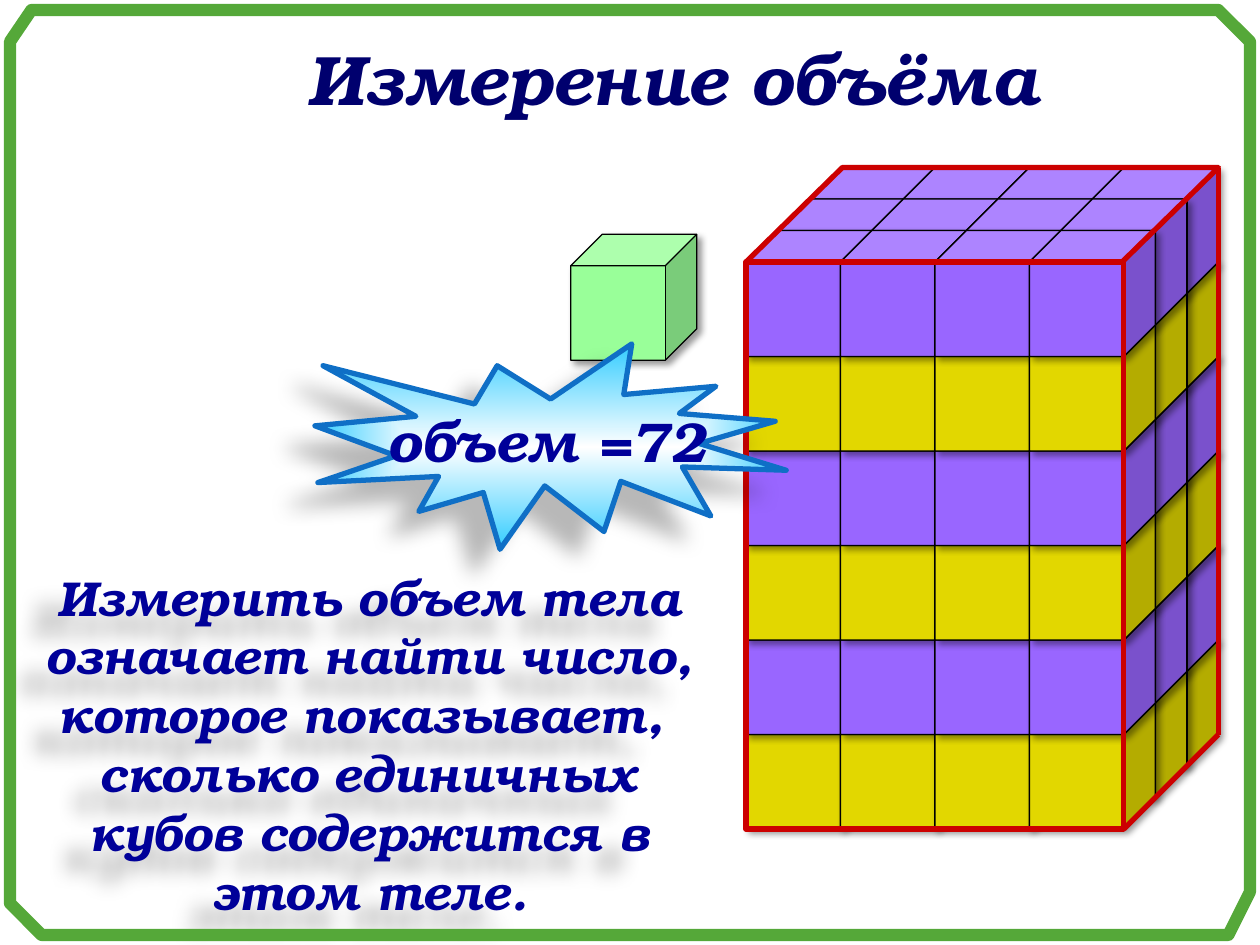
from dataclasses import dataclass
from itertools import product

from lxml.etree import SubElement
from pptx import Presentation
from pptx.dml.color import RGBColor
from pptx.enum.shapes import MSO_CONNECTOR, MSO_SHAPE
from pptx.enum.text import MSO_ANCHOR, MSO_AUTO_SIZE, PP_ALIGN
from pptx.oxml.ns import qn
from pptx.util import Inches, Pt


@dataclass(frozen=True)
class Theme:
    font: str = "TeX Gyre Bonum"
    title_size: int = 40
    seal_size: int = 32
    body_size: int = 28
    title: str = "00006E"
    text: str = "000099"
    purple: str = "9966FF"
    yellow: str = "E2D700"
    unit: str = "99FF99"
    edge: str = "000000"
    outline: str = "CC0000"
    frame: str = "55A839"
    seal_line: str = "0F6FC6"
    seal_center: str = "FFFFFF"
    seal_rim: str = "33CCFF"


THEME = Theme()
COLUMNS, ROWS, LAYERS = 4, 6, 3
CUBE_SIDE, CUBE_DEPTH = 0.75, 0.25
BLOCK_LEFT, BLOCK_TOP = 5.92, 2.08  # top left corner of the front face
CUBE_SHADOW = dict(opacity=40, blur=4, distance=3, angle=45)
LONG_SHADOW = dict(opacity=28, blur=11.8, distance=19.7, angle=141)


def set_line(shape, color, width):
    shape.line.color.rgb = RGBColor.from_string(color)
    shape.line.width = Pt(width)


def set_shadow(shape, opacity, blur, distance, angle):
    shape.shadow.inherit = False
    effects = shape._element.spPr.find(qn("a:effectLst"))
    shadow = SubElement(effects, qn("a:outerShdw"), blurRad=str(Pt(blur)),
                        dist=str(Pt(distance)), dir=str(angle * 60000),
                        algn="tl", rotWithShape="0")
    color = SubElement(shadow, qn("a:srgbClr"), val="000000")
    SubElement(color, qn("a:alpha"), val=str(opacity * 1000))


def set_radial_fill(shape, center, rim):
    shape.fill.gradient()
    for stop, position, color in zip(shape.fill.gradient_stops, (0, 1), (center, rim)):
        stop.position = position
        stop.color.rgb = RGBColor.from_string(color)
    gradient = shape._element.spPr.find(qn("a:gradFill"))
    gradient.remove(gradient.find(qn("a:lin")))
    path = SubElement(gradient, qn("a:path"), {"path": "shape"})
    SubElement(path, qn("a:fillToRect"), l="50000", t="50000", r="50000", b="50000")


def add_preset(shapes, kind, left, top, width, height, adjustments=()):
    """Add a preset shape with neither fill, line nor shadow."""
    shape = shapes.add_shape(kind, Inches(left), Inches(top), Inches(width), Inches(height))
    for index, value in enumerate(adjustments):
        shape.adjustments[index] = value
    shape.fill.background()
    shape.line.fill.background()
    shape.shadow.inherit = False
    return shape


def write_text(shape, text, size, color, align=PP_ALIGN.CENTER,
               anchor=MSO_ANCHOR.TOP, wrap=True):
    frame = shape.text_frame
    frame.word_wrap = wrap
    frame.auto_size = MSO_AUTO_SIZE.NONE
    frame.vertical_anchor = anchor
    paragraph = frame.paragraphs[0]
    paragraph.text = text
    paragraph.alignment = align
    for run in paragraph.runs:
        font = run.font
        font.name = THEME.font
        font.size = Pt(size)
        font.bold = font.italic = True
        font.color.rgb = RGBColor.from_string(color)


def add_cube(shapes, left, top, color):
    size = CUBE_SIDE + CUBE_DEPTH
    cube = add_preset(shapes, MSO_SHAPE.CUBE, left, top, size, size, [CUBE_DEPTH / size])
    cube.fill.solid()
    cube.fill.fore_color.rgb = RGBColor.from_string(color)
    set_line(cube, THEME.edge, 0.75)
    set_shadow(cube, **CUBE_SHADOW)


def add_block(shapes):
    """Stack unit cubes from back to front, left to right, bottom to top."""
    order = product(reversed(range(LAYERS)), range(COLUMNS), reversed(range(ROWS)))
    for layer, column, row in order:
        left = BLOCK_LEFT + column * CUBE_SIDE + layer * CUBE_DEPTH
        top = BLOCK_TOP + row * CUBE_SIDE - (layer + 1) * CUBE_DEPTH
        add_cube(shapes, left, top, THEME.yellow if row % 2 else THEME.purple)


def add_edge(shapes, start, end):
    points = [Inches(value) for value in (*start, *end)]
    edge = shapes.add_connector(MSO_CONNECTOR.STRAIGHT, *points)
    set_line(edge, THEME.outline, 3)
    SubElement(edge._element.spPr, qn("a:effectLst"))


def add_block_outline(shapes):
    group = shapes.add_group_shape().shapes
    width, height, depth = COLUMNS * CUBE_SIDE, ROWS * CUBE_SIDE, LAYERS * CUBE_DEPTH
    right, bottom = BLOCK_LEFT + width, BLOCK_TOP + height
    back_right, back_top, back_bottom = right + depth, BLOCK_TOP - depth, bottom - depth
    add_edge(group, (back_right, back_top), (back_right, back_bottom))
    front = add_preset(group, MSO_SHAPE.RECTANGLE, BLOCK_LEFT, BLOCK_TOP, width, height)
    lid = add_preset(group, MSO_SHAPE.PARALLELOGRAM, BLOCK_LEFT, back_top,
                     width + depth, depth, [1.02])
    for face in (front, lid):
        set_line(face, THEME.outline, 3)
    add_edge(group, (back_right, back_bottom), (right, bottom))


def add_frame(shapes):
    corners = [(0.08, 0.33), (0.08, 7.17), (0.33, 7.42), (9.75, 7.42),
               (9.92, 7.08), (9.92, 0.33), (9.67, 0.08), (0.25, 0.08)]
    points = [(Inches(x), Inches(y)) for x, y in corners]
    builder = shapes.build_freeform(*points[0])
    builder.add_line_segments(points[1:], close=True)
    frame = builder.convert_to_shape()
    frame.fill.background()
    frame.shadow.inherit = False
    set_line(frame, THEME.frame, 7)


def add_title(slide, text):
    title = slide.shapes.title
    title.left, title.top = Inches(2.34), Inches(0.23)
    title.width, title.height = Inches(6.19), Inches(0.77)
    write_text(title, text, THEME.title_size, THEME.title, align=PP_ALIGN.LEFT, wrap=False)


def add_definition(shapes, text):
    callout = add_preset(shapes, MSO_SHAPE.ROUNDED_RECTANGULAR_CALLOUT,
                         0, 4.3, 5.86, 3.05, [-0.12, -1.1, 0.17])
    set_shadow(callout, **LONG_SHADOW)
    write_text(callout, text, THEME.body_size, THEME.text)


def add_seal(shapes, text):
    seal = add_preset(shapes, MSO_SHAPE.EXPLOSION1, 2.5, 2.73, 3.74, 1.63)
    set_radial_fill(seal, THEME.seal_center, THEME.seal_rim)
    set_line(seal, THEME.seal_line, 3)
    set_shadow(seal, **LONG_SHADOW)
    write_text(seal, text, THEME.seal_size, THEME.text, anchor=MSO_ANCHOR.MIDDLE, wrap=False)


def main():
    presentation = Presentation()
    presentation.slide_width, presentation.slide_height = Inches(10), Inches(7.5)
    slide = presentation.slides.add_slide(presentation.slide_layouts[5])
    shapes = slide.shapes
    add_title(slide, "Измерение объёма")
    add_block(shapes)
    add_block_outline(shapes)
    add_cube(shapes, 4.53, 1.86, THEME.unit)
    add_definition(shapes, "Измерить объем тела означает найти число, которое показывает, \v"
                           "сколько единичных кубов содержится в этом теле.")
    add_frame(shapes)
    add_seal(shapes, "объем =72")
    presentation.save("out.pptx")


if __name__ == "__main__":
    main()
